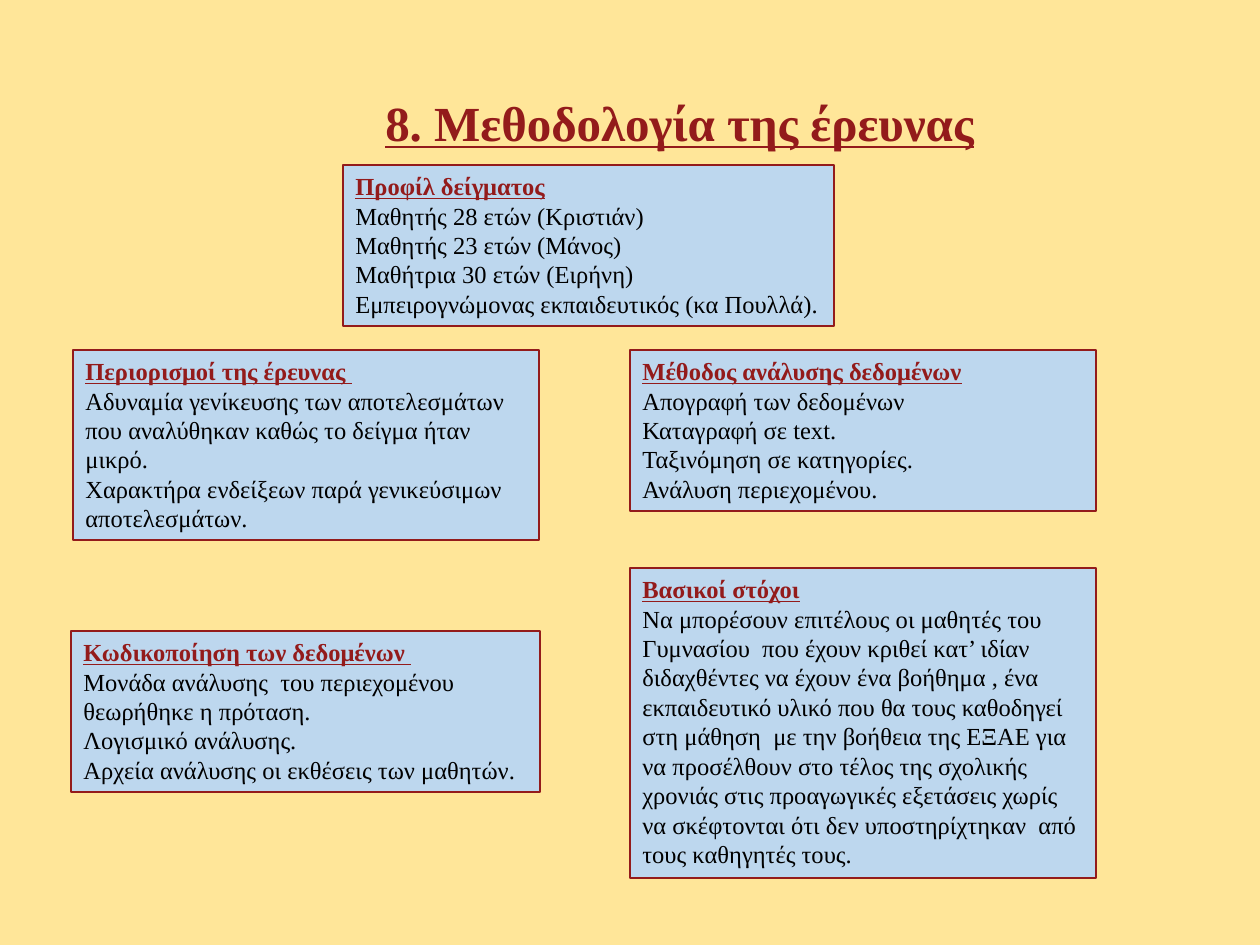
from pptx import Presentation
from pptx.dml.color import RGBColor
from pptx.enum.shapes import MSO_SHAPE
from pptx.enum.text import MSO_ANCHOR, MSO_AUTO_SIZE, PP_ALIGN
from pptx.util import Pt

EMU_PER_PX = 914400 / 126
CREAM, BLUE, MAROON, BLACK = "FFE699", "BDD7EE", "931B1B", "000000"
FONT = "Times New Roman"

HEADING = {"size": Pt(14), "bold": True, "underline": True}
BODY = {"size": Pt(14), "bold": False, "underline": False}
TITLE = {"size": Pt(28), "bold": True, "underline": True}

# (left, top, width, height), heading, body paragraphs
PANELS = [
    ((73, 350, 466, 190), "Περιορισμοί της έρευνας ", [
        "Αδυναμία γενίκευσης των αποτελεσμάτων που αναλύθηκαν καθώς "
        "το δείγμα ήταν μικρό.",
        "Χαρακτήρα ενδείξεων παρά γενικεύσιμων αποτελεσμάτων.",
    ]),
    ((630, 350, 466, 161), "Μέθοδος ανάλυσης δεδομένων", [
        "Απογραφή των δεδομένων",
        "Καταγραφή σε text.",
        "Ταξινόμηση σε κατηγορίες.",
        "Ανάλυση περιεχομένου.",
    ]),
    ((630, 568, 466, 310), "Βασικοί στόχοι", [
        "Να μπορέσουν επιτέλους οι μαθητές του Γυμνασίου  που έχουν κριθεί "
        "κατ’ ιδίαν διδαχθέντες να έχουν ένα βοήθημα , ένα εκπαιδευτικό "
        "υλικό που θα τους καθοδηγεί  στη μάθηση  με την βοήθεια της ΕΞΑΕ "
        "για να προσέλθουν στο τέλος της σχολικής χρονιάς στις προαγωγικές "
        "εξετάσεις χωρίς να σκέφτονται ότι δεν υποστηρίχτηκαν  από τους "
        "καθηγητές τους.",
    ]),
    ((71, 631, 469, 161), "Κωδικοποίηση των δεδομένων ", [
        "Μονάδα ανάλυσης  του περιεχομένου θεωρήθηκε η πρόταση.",
        "Λογισμικό ανάλυσης.",
        "Αρχεία ανάλυσης οι εκθέσεις των μαθητών.",
    ]),
    ((343, 165, 491, 161), "Προφίλ δείγματος", [
        "Μαθητής 28 ετών (Κριστιάν)",
        "Μαθητής 23 ετών (Μάνος)",
        "Μαθήτρια 30 ετών (Ειρήνη)",
        "Εμπειρογνώμονας εκπαιδευτικός (κα Πουλλά).",
    ]),
]


def px(length):
    return round(length * EMU_PER_PX)


def color(value):
    return RGBColor.from_string(value)


def apply_format(target, values):
    for name, value in values.items():
        setattr(target, name, value)


def write(paragraph, text, font_values, ink):
    run = paragraph.add_run()
    run.text = text
    apply_format(run.font, {"name": FONT, **font_values})
    run.font.color.rgb = color(ink)


def add_title(slide, text):
    frame = slide.shapes.add_textbox(*map(px, (144, 86, 1071, 79))).text_frame
    apply_format(frame, {"word_wrap": True, "vertical_anchor": MSO_ANCHOR.MIDDLE})
    line = frame.paragraphs[0]
    apply_format(line, {"alignment": PP_ALIGN.CENTER, "line_spacing": 0.9})
    write(line, text, TITLE, MAROON)


def add_panel(slide, box, heading, body):
    panel = slide.shapes.add_shape(MSO_SHAPE.RECTANGLE, *map(px, box))
    panel.shadow.inherit = False
    panel.fill.solid()
    panel.fill.fore_color.rgb = color(BLUE)
    panel.line.color.rgb = color(MAROON)
    panel.line.width = Pt(0.75)

    frame = panel.text_frame
    apply_format(frame, {
        "word_wrap": True,
        "vertical_anchor": MSO_ANCHOR.TOP,
        "auto_size": MSO_AUTO_SIZE.SHAPE_TO_FIT_TEXT,
    })
    write(frame.paragraphs[0], heading, HEADING, MAROON)
    for text in body:
        write(frame.add_paragraph(), text, BODY, BLACK)
    for paragraph in frame.paragraphs:
        paragraph.alignment = PP_ALIGN.LEFT


def main():
    deck = Presentation()
    apply_format(deck, {"slide_width": px(1260), "slide_height": px(945)})
    slide = deck.slides.add_slide(deck.slide_layouts[6])
    slide.background.fill.solid()
    slide.background.fill.fore_color.rgb = color(CREAM)

    add_title(slide, "8. Μεθοδολογία της έρευνας")
    for box, heading, body in PANELS:
        add_panel(slide, box, heading, body)
    deck.save("out.pptx")


if __name__ == "__main__":
    main()
